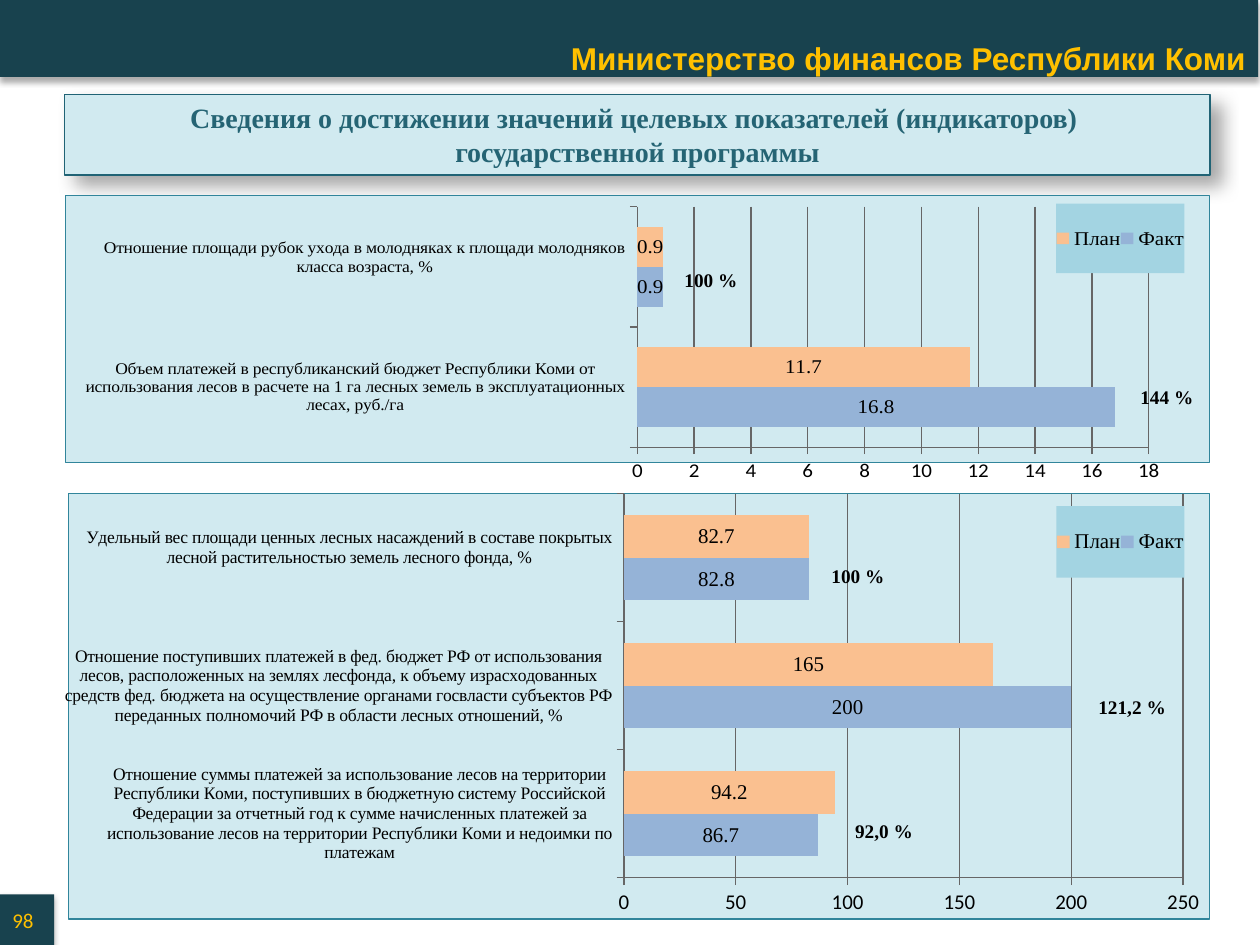
from collections import namedtuple
from dataclasses import dataclass

import lxml.etree
import pptx
import pptx.chart.data
import pptx.dml.color
import pptx.enum.chart
import pptx.enum.shapes
import pptx.enum.text
import pptx.oxml
import pptx.oxml.ns
import pptx.util

Pt = pptx.util.Pt
qn = pptx.oxml.ns.qn
Align = pptx.enum.text.PP_ALIGN
Anchor = pptx.enum.text.MSO_ANCHOR
Box = namedtuple("Box", "left top width height")


@dataclass(frozen=True)
class Theme:
    serif: str = "Times New Roman"
    sans: str = "Calibri"
    header_font: str = "Arial"
    dark: str = "18424E"
    gold: str = "FFC000"
    panel: str = "D1EAF0"
    panel_line: str = "206375"
    heading: str = "256474"
    chart_line: str = "31859B"
    legend: str = "A3D4E2"
    axis: str = "666666"
    text: str = "000000"
    fact: str = "95B3D7"
    plan: str = "FAC090"
    header_size: float = 18
    heading_size: float = 16
    label_size: float = 12
    callout_size: float = 11
    category_size: float = 10


THEME = Theme()


def rgb(value):
    return pptx.dml.color.RGBColor.from_string(value)


def points(box):
    return [Pt(length) for length in box]


def style_font(font, size, name, color, bold=False):
    font.size, font.name, font.bold = Pt(size), name, bold
    font.color.rgb = rgb(color)


def add_span(para, text, size, name, color, bold=False):
    span = para.add_run()
    span.text = text
    style_font(span.font, size, name, color, bold)


def paint(shape, fill, line=None):
    shape.fill.solid()
    shape.fill.fore_color.rgb = rgb(fill)
    if line:
        shape.line.color.rgb = rgb(line)
        shape.line.width = Pt(0.75)
    else:
        shape.line.fill.background()


def add_shadow(shape, alpha, blur, distance, angle):
    properties = shape._element.spPr
    for old in properties.findall(qn("a:effectLst")):
        properties.remove(old)
    effects = lxml.etree.SubElement(properties, qn("a:effectLst"))
    shadow = lxml.etree.SubElement(
        effects, qn("a:outerShdw"), blurRad=str(Pt(blur)), dist=str(Pt(distance)),
        dir=str(angle * 60000), algn="tl", rotWithShape="0")
    color = lxml.etree.SubElement(shadow, qn("a:srgbClr"), val="000000")
    lxml.etree.SubElement(color, qn("a:alpha"), val=str(alpha * 1000))


def add_band(page, box):
    band = page.shapes.add_shape(pptx.enum.shapes.MSO_SHAPE.RECTANGLE, *points(box))
    paint(band, THEME.dark)
    add_shadow(band, 32, 3.5, 2.2, 90)
    return band.text_frame


def add_header(page, box):
    frame = add_band(page, box)
    frame.vertical_anchor = Anchor.BOTTOM
    frame.margin_bottom = 0
    para = frame.paragraphs[0]
    para.alignment = Align.RIGHT
    add_span(para, "Министерство финансов Республики Коми",
             THEME.header_size, THEME.header_font, THEME.gold, True)


def add_page_number(page, box, number):
    frame = add_band(page, box)
    frame.vertical_anchor = Anchor.MIDDLE
    para = frame.paragraphs[0]
    para.alignment = Align.LEFT
    add_span(para, number, THEME.label_size, THEME.sans, THEME.gold)


def place_title(page, box, lines):
    title = page.shapes.title
    title.left, title.top, title.width, title.height = points(box)
    paint(title, THEME.panel, THEME.panel_line)
    add_shadow(title, 35, 10.2, 8, 45)
    frame = title.text_frame
    frame.auto_size = pptx.enum.text.MSO_AUTO_SIZE.NONE
    frame.vertical_anchor = Anchor.TOP
    for index, line in enumerate(lines):
        para = frame.add_paragraph() if index else frame.paragraphs[0]
        para.alignment = Align.CENTER
        add_span(para, line, THEME.heading_size, THEME.serif, THEME.heading, True)


def layout_xml(area, inner=False):
    """Manual chart layout; area holds fractions of the chart frame."""
    target = '<c:layoutTarget val="inner"/>' if inner else ""
    modes = '<c:xMode val="edge"/><c:yMode val="edge"/>'
    sizes = "".join(f'<c:{key} val="{value}"/>' for key, value in zip("xywh", area))
    return pptx.oxml.parse_xml(
        f'<c:layout {pptx.oxml.ns.nsdecls("c")}><c:manualLayout>'
        f"{target}{modes}{sizes}</c:manualLayout></c:layout>")


def fill_xml(fill, line=None):
    def solid(color):
        return f'<a:solidFill><a:srgbClr val="{color}"/></a:solidFill>'
    edge = f'<a:ln w="{Pt(0.75)}">{solid(line)}</a:ln>' if line else ""
    return pptx.oxml.parse_xml(
        f'<c:spPr {pptx.oxml.ns.nsdecls("c", "a")}>{solid(fill)}{edge}</c:spPr>')


def add_legend(chart, area):
    chart.has_legend = True
    legend = chart.legend
    legend.position = pptx.enum.chart.XL_LEGEND_POSITION.RIGHT
    legend.include_in_layout = False
    style_font(legend.font, THEME.label_size, THEME.serif, THEME.text)
    element = legend._element
    for old in element.findall(qn("c:layout")):
        element.remove(old)
    element.find(qn("c:legendPos")).addnext(layout_xml(area))
    element.find(qn("c:overlay")).addnext(fill_xml(THEME.legend))


def style_axes(chart, maximum, step):
    for axis, size, name in (
            (chart.category_axis, THEME.category_size, THEME.serif),
            (chart.value_axis, THEME.label_size, THEME.sans)):
        axis.major_tick_mark = pptx.enum.chart.XL_TICK_MARK.OUTSIDE
        axis.minor_tick_mark = pptx.enum.chart.XL_TICK_MARK.NONE
        style_font(axis.tick_labels.font, size, name, THEME.text)
        axis.format.line.color.rgb = rgb(THEME.axis)
        axis.format.line.width = Pt(0.75)
    values = chart.value_axis
    values.minimum_scale, values.maximum_scale, values.major_unit = 0, maximum, step
    values.has_major_gridlines = True
    values.major_gridlines.format.line.color.rgb = rgb(THEME.axis)
    values.major_gridlines.format.line.width = Pt(0.75)


def add_indicator_chart(page, box, rows, maximum, step, plot_area, legend_area):
    """Each row is a category with its actual and planned value, from the bottom up."""
    names, fact, plan = zip(*rows)
    data = pptx.chart.data.CategoryChartData()
    data.categories = names
    data.add_series("Факт", fact)
    data.add_series("План", plan)
    chart = page.shapes.add_chart(
        pptx.enum.chart.XL_CHART_TYPE.BAR_CLUSTERED, *points(box), data).chart
    chart.has_title = False
    style_font(chart.font, THEME.header_size, THEME.sans, THEME.text)
    style_axes(chart, maximum, step)
    plot = chart.plots[0]
    plot.gap_width, plot.vary_by_categories = 100, False
    for series, color in zip(plot.series, (THEME.fact, THEME.plan)):
        paint(series.format, color)
        labels = series.data_labels
        labels.show_value = True
        labels.position = pptx.enum.chart.XL_LABEL_POSITION.CENTER
        style_font(labels.font, THEME.label_size, THEME.serif, THEME.text)
    add_legend(chart, legend_area)
    body = chart._chartSpace.find(qn("c:chart"))
    body.addnext(fill_xml(THEME.panel, THEME.chart_line))
    area = body.find(qn("c:plotArea"))
    for old in area.findall(qn("c:layout")):
        area.remove(old)
    area.insert(0, layout_xml(plot_area, inner=True))


def add_callout(page, box, text):
    frame = page.shapes.add_textbox(*points(box)).text_frame
    frame.word_wrap = True
    add_span(frame.paragraphs[0], text, THEME.callout_size, THEME.serif, THEME.text, True)


def main():
    deck = pptx.Presentation()
    deck.slide_width, deck.slide_height = Pt(720), Pt(540)
    page = deck.slides.add_slide(deck.slide_layouts[5])
    add_header(page, Box(0, -0.5, 719, 44.5))
    place_title(page, Box(37, 54, 654.5, 46), (
        "Сведения о достижении значений целевых показателей (индикаторов) ",
        "государственной программы"))
    add_page_number(page, Box(0, 511, 31, 29), "98")
    add_indicator_chart(page, Box(37, 281.5, 654.5, 244), (
        ("Отношение суммы платежей за использование лесов на территории Республики Коми, "
         "поступивших в бюджетную систему Российской Федерации за отчетный год к сумме "
         "начисленных платежей за использование лесов на территории Республики Коми "
         "и недоимки по платежам", 86.7, 94.2),
        ("Отношение поступивших платежей в фед. бюджет РФ от использования лесов, "
         "расположенных на землях лесфонда, к объему израсходованных средств фед. бюджета "
         "на осуществление органами госвласти субъектов РФ переданных полномочий РФ "
         "в области лесных отношений, %", 200, 165),
        ("Удельный вес площади ценных лесных насаждений в составе покрытых лесной "
         "растительностью земель лесного фонда, %\n", 82.8, 82.7),
    ), 250, 50, (0.487, 0.001, 0.49, 0.902), (0.866, 0.03, 0.112, 0.168))
    add_indicator_chart(page, Box(37, 111.5, 654.5, 164), (
        ("Объем платежей в республиканский бюджет Республики Коми от использования лесов "
         "в расчете на 1 га лесных земель в эксплуатационных лесах, руб./га", 16.8, 11.7),
        ("Отношение площади рубок ухода в молодняках к площади молодняков "
         "класса возраста, %\n", 0.9, 0.9),
    ), 18, 2, (0.5, 0.041, 0.447, 0.902), (0.866, 0.03, 0.112, 0.26))
    for left, top, width, text in (
            (384, 150, 46, "100 %"), (468, 319, 57, "100 %"), (620.5, 394, 57, "121,2 %"),
            (481.5, 464.5, 57, "92,0 %"), (644.5, 216.5, 46, "144 %")):
        add_callout(page, Box(left, top, width, 21), text)
    deck.save("out.pptx")


if __name__ == "__main__":
    main()
